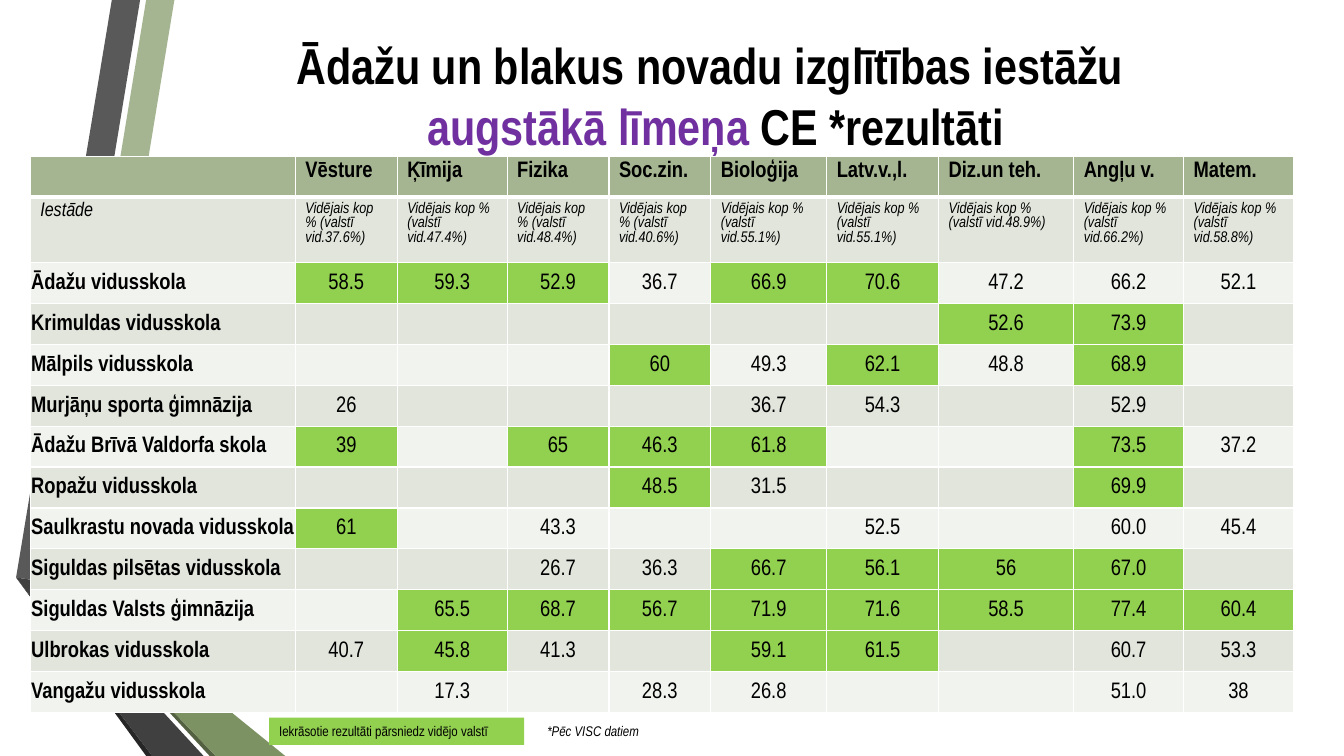
from lxml import etree
from pptx import Presentation, util as u
from pptx.dml.color import RGBColor
from pptx.enum import shapes, text
from pptx.oxml.ns import qn

FONT = "Arial Narrow"
BLACK, WHITE, PURPLE = "000000", "FFFFFF", "7030A0"
SAGE, GREEN = "A5B592", "92D050"
BANDS = ["F0F3EE", "E1E5DC"]
HIGHLIGHT = "*"

RIBBONS = [
    (SAGE, [(0.5, 5.78), (0.77, 5.83), (1.73, 0), (1.45, 0)]),
    ("595959", [(1.39, 0), (1.11, 0), (0.16, 5.73), (0.44, 5.77)]),
    ("262626", [(0.16, 5.73), (1.45, 7.5), (1.51, 7.5)]),
    ("536142", [(0.5, 5.79), (2.08, 7.5), (2.14, 7.5)]),
    ("7D9263", [(0.5, 5.79), (2.14, 7.5), (2.83, 7.5), (0.77, 5.83), (0.5, 5.78)]),
    ("404040", [(2.02, 7.5), (0.48, 5.83), (0.43, 5.77), (0.16, 5.73), (1.51, 7.5)]),
]

SUBJECTS = [
    ("Vēsture", "37.6", 1.01), ("Ķīmija", "47.4", 1.09), ("Fizika", "48.4", 1.01),
    ("Soc.zin.", "40.6", 1.01), ("Bioloģija", "55.1", 1.15), ("Latv.v.,l.", "55.1", 1.11),
    ("Diz.un teh.", "48.9", 1.34), ("Angļu v.", "66.2", 1.09), ("Matem.", "58.8", 1.09),
]

RESULTS = [
    ("Ādažu vidusskola", "58.5*|59.3*|52.9*|36.7|66.9*|70.6*|47.2|66.2|52.1"),
    ("Krimuldas vidusskola", "||||||52.6*|73.9*|"),
    ("Mālpils vidusskola", "|||60*|49.3|62.1*|48.8|68.9*|"),
    ("Murjāņu sporta ģimnāzija", "26||||36.7|54.3||52.9|"),
    ("Ādažu Brīvā Valdorfa skola", "39*||65*|46.3*|61.8*|||73.5*|37.2"),
    ("Ropažu vidusskola", "|||48.5*|31.5|||69.9*|"),
    ("Saulkrastu novada vidusskola", "61*||43.3|||52.5||60.0|45.4"),
    ("Siguldas pilsētas vidusskola", "||26.7|36.3|66.7*|56.1*|56*|67.0*|"),
    ("Siguldas Valsts ģimnāzija", "|65.5*|68.7*|56.7*|71.9*|71.6*|58.5*|77.4*|60.4*"),
    ("Ulbrokas vidusskola", "40.7|45.8*|41.3||59.1*|61.5*||60.7|53.3"),
    ("Vangažu vidusskola", "|17.3||28.3|26.8|||51.0|38"),
]


def rgb(value):
    return RGBColor.from_string(value)


def style(p, size, bold=False, italic=False, color=BLACK, align=None):
    f = p.font
    f.name, f.size, f.bold, f.italic = FONT, u.Pt(size), bold, italic
    f.color.rgb = rgb(color)
    p.alignment = align


def ribbons(s, x, y):
    for color, points in RIBBONS:
        pts = [(u.Inches(x + px), u.Inches(y + py)) for px, py in points]
        fb = s.shapes.build_freeform(*pts[0], scale=1.0)
        fb.add_line_segments(pts[1:], close=True)
        sp = fb.convert_to_shape()
        sp.shadow.inherit = False
        sp.fill.solid()
        sp.fill.fore_color.rgb = rgb(color)
        sp.line.fill.background()


def title(s, x, y, w, h):
    sp = s.shapes.add_textbox(*map(u.Inches, (x, y, w, h)))
    tf = sp.text_frame
    tf.word_wrap = True
    tf.vertical_anchor = text.MSO_ANCHOR.MIDDLE
    p = tf.paragraphs[0]
    style(p, 36, bold=True, align=text.PP_ALIGN.CENTER)
    p.add_run().text = "Ādažu un blakus novadu izglītības iestāžu "
    p.add_line_break()
    r = p.add_run()
    r.text = "augstākā līmeņa "
    r.font.color.rgb = rgb(PURPLE)
    p.add_run().text = "CE *rezultāti"


def borders(cell, bottom):
    tcPr = cell._tc.get_or_add_tcPr()
    widths = {"lnL": 1, "lnR": 1, "lnT": 1, "lnB": bottom}
    for i, (tag, width) in enumerate(widths.items()):
        ln = etree.Element(qn("a:" + tag), w=str(u.Pt(width)))
        fill = etree.SubElement(ln, qn("a:solidFill"))
        etree.SubElement(fill, qn("a:srgbClr"), val=WHITE)
        tcPr.insert(i, ln)


def put(cell, value, fill, size, bottom=1, **font):
    cell.fill.solid()
    cell.fill.fore_color.rgb = rgb(fill)
    borders(cell, bottom)
    p = cell.text_frame.paragraphs[0]
    p.text = value
    style(p, size, **font)


def result_cell(cell, value, fill, **font):
    cell.vertical_anchor = text.MSO_ANCHOR.MIDDLE
    cell.margin_left = cell.margin_right = cell.margin_top = u.Inches(0.01)
    cell.margin_bottom = 0
    put(cell, value, fill, 16, **font)


def results_table(s, x, y, w, h):
    gf = s.shapes.add_table(len(RESULTS) + 2, len(SUBJECTS) + 1, *map(u.Inches, (x, y, w, h)))
    tb = gf.table
    widths = [width for _, _, width in SUBJECTS]
    for col, width in zip(tb.columns, [w - sum(widths)] + widths):
        col.width = u.Inches(width)
    note_h = 0.52
    for i, row in enumerate(tb.rows):
        row.height = u.Inches(note_h if i == 1 else (h - note_h) / (len(RESULTS) + 1))

    put(tb.cell(0, 0), "", SAGE, 16, bottom=3)
    put(tb.cell(1, 0), "Iestāde", BANDS[1], 14, italic=True)
    for c, (subject, average, _) in enumerate(SUBJECTS, 1):
        put(tb.cell(0, c), subject, SAGE, 16, bottom=3, bold=True)
        note = f"Vidējais kop % (valstī vid.{average}%)"
        put(tb.cell(1, c), note, BANDS[1], 11, italic=True)

    for i, (school, scores) in enumerate(RESULTS):
        band = BANDS[i % 2]
        result_cell(tb.cell(i + 2, 0), school, band, bold=True)
        for c, score in enumerate(scores.split("|"), 1):
            fill = GREEN if score.endswith(HIGHLIGHT) else band
            value = score.rstrip(HIGHLIGHT)
            result_cell(tb.cell(i + 2, c), value, fill, align=text.PP_ALIGN.CENTER)


def footer(s, x, y, h):
    key_w = 2.53
    key = s.shapes.add_shape(shapes.MSO_SHAPE.RECTANGLE, *map(u.Inches, (x, y, key_w, h)))
    key.shadow.inherit = False
    key.fill.solid()
    key.fill.fore_color.rgb = rgb(GREEN)
    key.line.fill.background()
    note = s.shapes.add_textbox(*map(u.Inches, (x + key_w + 0.13, y, 2.67, h)))
    for sp, words, italic in [
        (key, "Iekrāsotie rezultāti pārsniedz vidējo valstī", False),
        (note, "*Pēc VISC datiem", True),
    ]:
        tf = sp.text_frame
        tf.word_wrap = True
        p = tf.paragraphs[0]
        p.text = words
        style(p, 10, italic=italic, align=text.PP_ALIGN.LEFT)


def main():
    prs = Presentation()
    prs.slide_width, prs.slide_height = u.Inches(13.33), u.Inches(7.5)
    s = prs.slides.add_slide(prs.slide_layouts[6])
    ribbons(s, 0, 0)
    title(s, 1.62, 0.21, 10.96, 1.46)
    results_table(s, 0.3, 1.55, 12.53, 5.39)
    footer(s, 2.67, 7.12, 0.27)
    prs.save("out.pptx")


if __name__ == "__main__":
    main()
